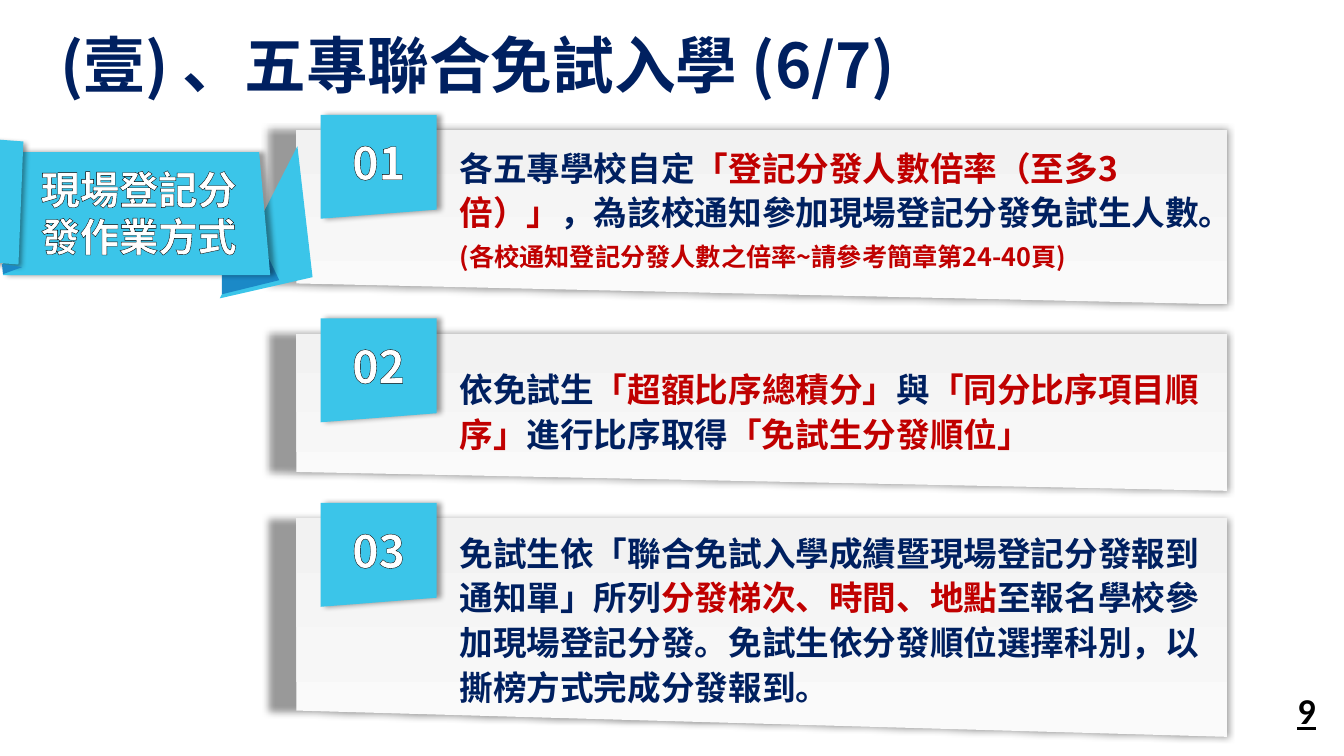
from dataclasses import dataclass

from lxml import etree
from pptx import Presentation
from pptx import util as u
from pptx.dml.color import RGBColor
from pptx.enum import shapes, text
from pptx.oxml import ns


@dataclass(frozen=True)
class Theme:
    """Colours, fonts and type sizes of the slide."""
    navy: str = "002060"
    red: str = "C00000"
    white: str = "FFFFFF"
    black: str = "000000"
    sky: str = "3BC5E9"
    fold: str = "1B89C7"
    panel_low: str = "FAFAFA"
    panel_high: str = "F2F2F2"
    font: str = "Noto Sans CJK SC"
    number_font: str = "Calibri"
    title: int = 44
    number: int = 32
    label: int = 28
    body: int = 24
    note: int = 18
    page: int = 26


THEME = Theme()
PANEL_LEFT, PANEL_WIDTH = 2.94, 9.23

STEPS = [
    ("01", 1.29, 1.73, 0.08, [
        ("各五專學校自定", THEME.navy),
        ("「登記分發人數倍率（至多3倍）」", THEME.red),
        ("，為該校通知參加現場登記分發免試生人數。", THEME.navy)],
     "(各校通知登記分發人數之倍率~請參考簡章第24-40頁)"),
    ("02", 3.31, 1.56, 0.26, [
        ("依免試生", THEME.navy), ("「超額比序總積分」", THEME.red),
        ("與", THEME.navy), ("「同分比序項目順序」", THEME.red),
        ("進行比序取得", THEME.navy), ("「免試生分發順位」", THEME.red)], None),
    ("03", 5.14, 2.17, 0.05, [
        ("免試生依「聯合免試入學成績暨現場登記分發報到通知單」所列", THEME.navy),
        ("分發梯次、時間、地點", THEME.red),
        ("至報名學校參加現場登記分發。免試生依分發順位選擇科別，以撕榜方式完成分發報到。",
         THEME.navy)], None),
]


def add_span(para, words, size, color, font=THEME.font, underline=None, outline=0):
    """Add one bold formatted run to a paragraph."""
    span = para.add_run()
    span.text = words
    span.font.size = u.Pt(size)
    span.font.bold = True
    span.font.underline = underline
    span.font.name = font
    span.font.color.rgb = RGBColor.from_string(color)
    props = span.font._element
    east = etree.Element(ns.qn("a:ea"), typeface=font)
    props.find(ns.qn("a:latin")).addnext(east)
    if outline:
        line = etree.Element(ns.qn("a:ln"), w=str(u.Pt(outline)))
        fill = etree.SubElement(line, ns.qn("a:solidFill"))
        etree.SubElement(fill, ns.qn("a:srgbClr"), val=THEME.black)
        props.insert(0, line)


def add_text(page, words, left, top, width, height, wrap=True, align=None, **style):
    """Add a text box; words may be empty for paragraphs filled in later."""
    box = page.shapes.add_textbox(*map(u.Inches, (left, top, width, height)))
    box.text_frame.word_wrap = wrap
    para = box.text_frame.paragraphs[0]
    para.alignment = align
    if words:
        add_span(para, words, **style)
    return box.text_frame


def add_shadow(shape, blur, distance=0, direction=0, **scale):
    """Give a shape a soft black outer shadow."""
    effects = shape._element.spPr.find(ns.qn("a:effectLst"))
    shadow = etree.SubElement(
        effects, ns.qn("a:outerShdw"), blurRad=str(u.Pt(blur)),
        dist=str(u.Pt(distance)), dir=str(direction * 60000), **scale, rotWithShape="0")
    color = etree.SubElement(shadow, ns.qn("a:srgbClr"), val=THEME.black)
    etree.SubElement(color, ns.qn("a:alpha"), val="40000")


def paint(shape, color):
    """Fill a shape without line or inherited shadow."""
    shape.shadow.inherit = False
    shape.line.fill.background()
    shape.fill.solid()
    shape.fill.fore_color.rgb = RGBColor.from_string(color)


def add_outline(page, left, top, points, color):
    """Draw a closed polygon whose points are relative to left and top."""
    corners = [(u.Inches(left + x), u.Inches(top + y)) for x, y in points]
    builder = page.shapes.build_freeform(*corners[0])
    builder.add_line_segments(corners[1:], close=True)
    shape = builder.convert_to_shape()
    paint(shape, color)
    return shape


def add_title(page, left, top, width, height):
    """Place and format the title placeholder."""
    title = page.shapes.title
    title.left, title.top, title.width, title.height = map(
        u.Inches, (left, top, width, height))
    frame = title.text_frame
    frame.auto_size = text.MSO_AUTO_SIZE.NONE
    frame.vertical_anchor = text.MSO_ANCHOR.MIDDLE
    frame.margin_left = u.Inches(0.24)
    frame.paragraphs[0].alignment = text.PP_ALIGN.LEFT
    add_span(frame.paragraphs[0], "(壹) 、五專聯合免試入學 (6/7)", THEME.title, THEME.navy)


def add_step(page, left, top, width, height, number, offset, spans, note):
    """Draw one panel with its numbered tab and text."""
    panel = add_outline(page, left, top, [
        (width, 0), (0, 0), (0, height * 0.88), (width, height)], THEME.panel_low)
    panel.fill.gradient()
    panel.fill.gradient_angle = 90
    for stop, color in zip(panel.fill.gradient_stops, (THEME.panel_low, THEME.panel_high)):
        stop.color.rgb = RGBColor.from_string(color)
    add_shadow(panel, 5, sx="103000", algn="r")
    tab = add_outline(page, left + 0.24, top - 0.15, [
        (1.15, 0), (1.15, 0.94), (0, 1.03), (0, 0)], THEME.sky)
    add_shadow(tab, 4, 3)
    add_text(page, number, left + 0.26, top, 1.11, 0.64, align=text.PP_ALIGN.CENTER,
             size=THEME.number, color=THEME.white, outline=1.5)
    frame = add_text(page, "", left + 1.52, top + offset, 7.54, height - 0.3)
    para = frame.paragraphs[0]
    para.line_spacing = u.Pt(32)
    for words, color in spans:
        add_span(para, words, THEME.body, color)
    if note:
        para = frame.add_paragraph()
        para.space_before = u.Pt(6)
        add_span(para, note, THEME.note, THEME.red)


def add_ribbon(page, left, top):
    """Draw the folded ribbon with its label."""
    add_outline(page, left, top, [(2.95, 0.06), (3.1, 1.36), (2.18, 1.57)], THEME.sky)
    add_outline(page, left, top, [
        (2.21, 0.42), (2.41, 0.64), (2.44, 0.7), (2.77, 1.39), (2.2, 1.53)], THEME.fold)
    band = add_outline(page, left, top, [
        (0.03, 0.12), (2.57, 0.12), (2.68, 1.34), (0.03, 1.34)], THEME.sky)
    add_shadow(band, 4, 3)
    end = page.shapes.add_shape(
        shapes.MSO_SHAPE.PARALLELOGRAM,
        *map(u.Inches, (left - 0.2, top, 0.43, 1.22)))
    end.adjustments[0] = 0.1
    end.rotation = 4.3
    end._element.spPr.xfrm.set("flipV", "1")
    paint(end, THEME.sky)
    add_shadow(end, 4, 3, 45)
    add_outline(page, left, top, [(0.02, 1.23), (0.22, 1.26), (0.03, 1.33)], THEME.fold)
    add_text(page, "現場登記分發作業方式", left + 0.18, top + 0.2, 2.39, 1.04,
             align=text.PP_ALIGN.CENTER, size=THEME.label, color=THEME.white, outline=1.75)


def main():
    """Build the slide and save the deck."""
    deck = Presentation()
    deck.slide_width, deck.slide_height = u.Inches(13.33), u.Inches(7.5)
    page = deck.slides.add_slide(deck.slide_layouts[5])
    add_title(page, 0.36, 0.2, 9.99, 0.87)
    add_text(page, "9", 12.77, 6.78, 0.39, 0.54, wrap=False, size=THEME.page,
             color=THEME.black, font=THEME.number_font, underline=True)
    for number, top, height, offset, spans, note in STEPS:
        add_step(page, PANEL_LEFT, top, PANEL_WIDTH, height, number, offset, spans, note)
    add_ribbon(page, 0, 1.39)
    deck.save("out.pptx")


if __name__ == "__main__":
    main()
